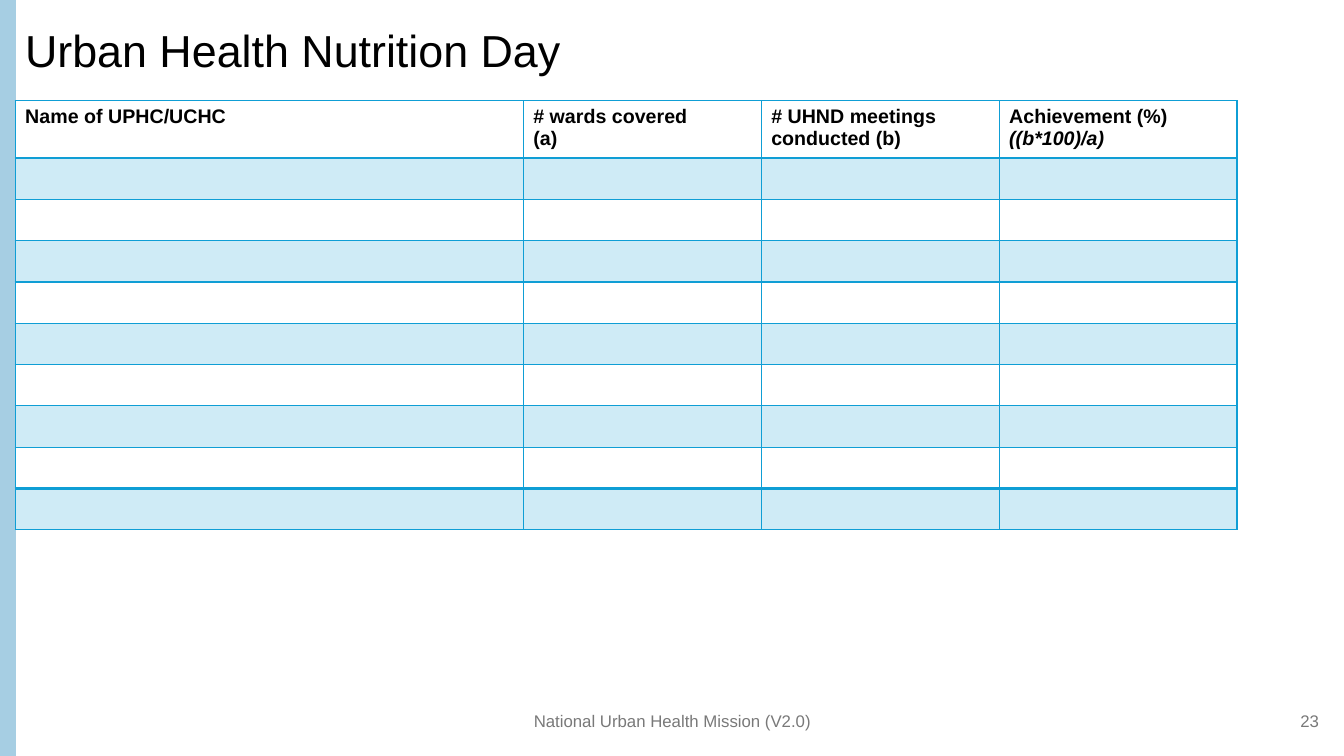
from lxml import etree
from pptx import Presentation
from pptx.dml.color import RGBColor
from pptx.enum.shapes import MSO_SHAPE
from pptx.enum.text import MSO_ANCHOR, PP_ALIGN
from pptx.oxml.ns import qn
from pptx.util import Inches, Pt

RECTANGLE = MSO_SHAPE.RECTANGLE
MIDDLE = MSO_ANCHOR.MIDDLE
LEFT, CENTER, RIGHT = PP_ALIGN.LEFT, PP_ALIGN.CENTER, PP_ALIGN.RIGHT

COLORS = {
    "text": "000000",
    "footer": "797979",
    "side_bar": "A6CEE3",
    "table": "0F9ED5",
}
FONT = "Arial"
BAND_OPACITY = 20

# Each header cell is a list of paragraphs: (text, font values).
HEADERS = [
    [("Name of UPHC/UCHC", {})],
    [("# wards covered", {}), ("(a)", {})],
    [("# UHND meetings conducted (b)", {})],
    [("Achievement (%)", {}), ("((b*100)/a)", {"italic": True})],
]
COLUMN_WIDTHS = [5.04, 2.36, 2.36, 2.36]
HEADER_HEIGHT, ROW_HEIGHT = 0.54, 0.41
BODY_ROWS = 9


def color(name):
    return RGBColor.from_string(COLORS[name])


def add_run(paragraph, text, color_name, **font_values):
    run = paragraph.add_run()
    run.text = text
    run.font.color.rgb = color(color_name)
    for name, value in {"name": FONT, **font_values}.items():
        setattr(run.font, name, value)


def add_side_bar(slide, height):
    bar = slide.shapes.add_shape(RECTANGLE, 0, 0, Inches(0.15), height)
    bar.shadow.inherit = False
    bar.fill.solid()
    bar.fill.fore_color.rgb = color("side_bar")
    bar.line.color.rgb = color("side_bar")
    bar.line.width = Pt(1.5)


def add_text(slide, box, text, size, color_name, alignment=LEFT, line_spacing=1.0):
    shape = slide.shapes.add_textbox(*map(Inches, box))
    frame = shape.text_frame
    frame.word_wrap = True
    frame.vertical_anchor = MIDDLE
    paragraph = frame.paragraphs[0]
    paragraph.alignment = alignment
    paragraph.line_spacing = line_spacing
    add_run(paragraph, text, color_name, size=Pt(size))


def set_borders(cell, widths):
    """Draw cell borders; widths maps lnL, lnR, lnT and lnB to points."""
    properties = cell._tc.get_or_add_tcPr()
    for position, (side, width) in enumerate(widths.items()):
        line = etree.Element(qn(f"a:{side}"), w=str(Pt(width)))
        fill = etree.SubElement(line, qn("a:solidFill"))
        etree.SubElement(fill, qn("a:srgbClr"), val=COLORS["table"])
        properties.insert(position, line)


def fill_band(cell):
    cell.fill.solid()
    cell.fill.fore_color.rgb = color("table")
    rgb = cell._tc.tcPr.find(f"{qn('a:solidFill')}/{qn('a:srgbClr')}")
    etree.SubElement(rgb, qn("a:alpha"), val=str(BAND_OPACITY * 1000))


def fill_header(cell, lines):
    frame = cell.text_frame
    for index, (text, font_values) in enumerate(lines):
        paragraph = frame.add_paragraph() if index else frame.paragraphs[0]
        add_run(paragraph, text, "text", size=Pt(14), bold=True, **font_values)


def add_meetings_table(slide, left, top):
    row_heights = [HEADER_HEIGHT] + [ROW_HEIGHT] * BODY_ROWS
    size = (sum(COLUMN_WIDTHS), sum(row_heights))
    frame = slide.shapes.add_table(
        len(row_heights), len(COLUMN_WIDTHS), *map(Inches, (left, top, *size))
    )
    table = frame.table
    for column, width in zip(table.columns, COLUMN_WIDTHS):
        column.width = Inches(width)
    for row, height in zip(table.rows, row_heights):
        row.height = Inches(height)

    # Heavy rules sit below the header and above the last row.
    heavy_rules = (1, BODY_ROWS)
    for row_index, row in enumerate(table.rows):
        top_width, bottom_width = (
            2 if rule in heavy_rules else 1 for rule in (row_index, row_index + 1)
        )
        for column_index, cell in enumerate(row.cells):
            if row_index == 0:
                fill_header(cell, HEADERS[column_index])
            if row_index % 2:
                fill_band(cell)
            else:
                cell.fill.background()
            set_borders(
                cell, {"lnL": 1, "lnR": 1, "lnT": top_width, "lnB": bottom_width}
            )


def main():
    presentation = Presentation()
    presentation.slide_width = Inches(13.33)
    presentation.slide_height = Inches(7.5)
    slide = presentation.slides.add_slide(presentation.slide_layouts[6])

    add_side_bar(slide, presentation.slide_height)
    add_text(slide, (0.15, 0.15, 13.05, 0.75), "Urban Health Nutrition Day",
             32, "text", line_spacing=0.9)
    add_meetings_table(slide, 0.15, 1)
    add_text(slide, (4.42, 6.95, 4.5, 0.4), "National Urban Health Mission (V2.0)",
             12, "footer", CENTER)
    add_text(slide, (10.18, 6.95, 3, 0.4), "23", 12, "footer", RIGHT)

    presentation.save("out.pptx")


if __name__ == "__main__":
    main()
